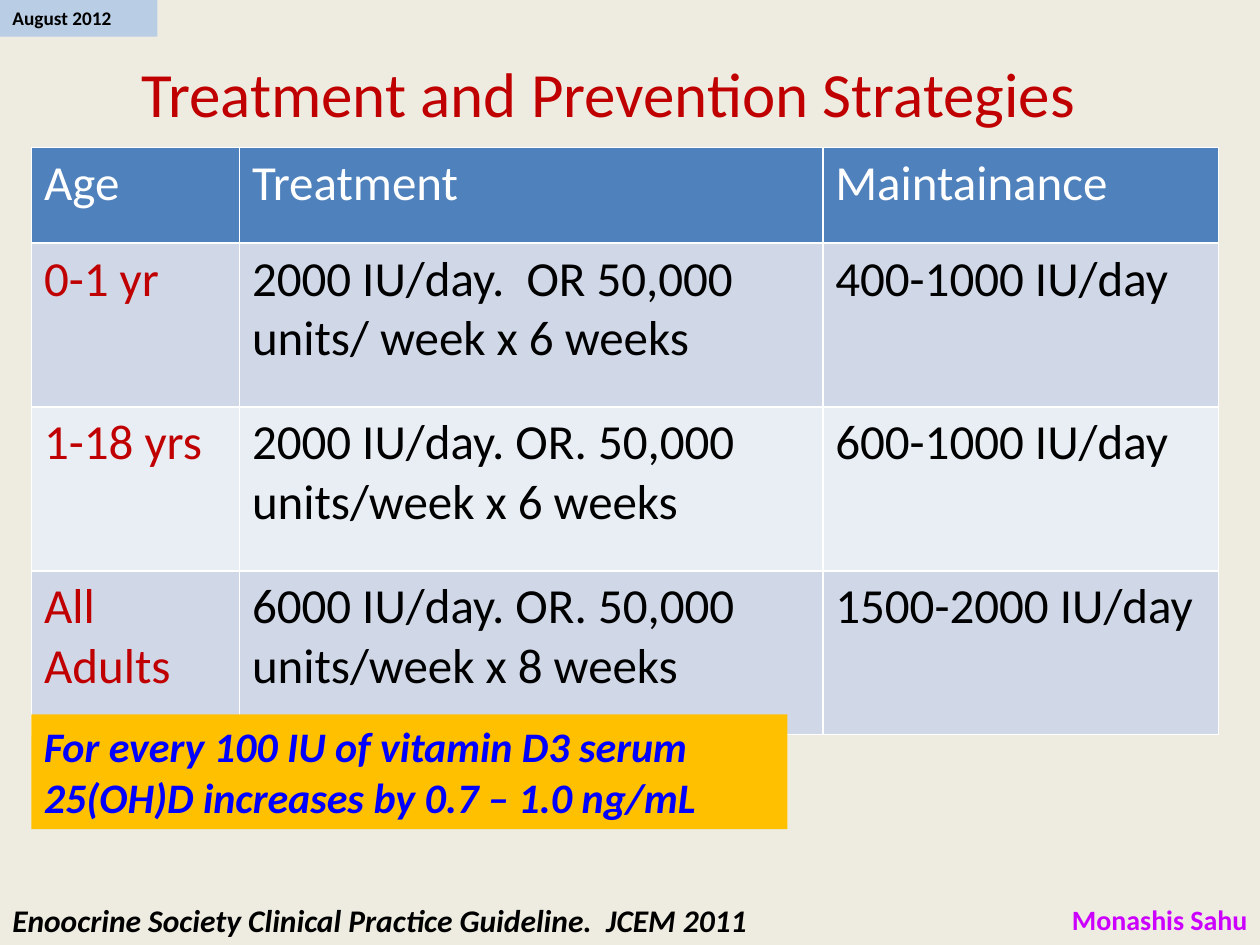
import pptx
import pptx.dml.color
import pptx.enum.shapes
import pptx.enum.text
import pptx.oxml.ns
import pptx.util
from lxml import etree

Inches = pptx.util.Inches
Pt = pptx.util.Pt
ALIGN = pptx.enum.text.PP_ALIGN
ANCHOR = pptx.enum.text.MSO_ANCHOR

COLORS = {
    "background": "EEECE1", "date": "B9CDE5", "note": "FFC000",
    "header": "4F81BD", "odd_row": "D0D8E8", "even_row": "E9EDF4",
    "white": "FFFFFF", "black": "000000", "red": "C00000",
    "blue": "0000FF", "magenta": "CC00FF",
}

DATE = "August 2012"
TITLE = "Treatment and Prevention Strategies"
AUTHOR = "Monashis Sahu"
SOURCE = "Enoocrine Society Clinical Practice Guideline.  JCEM 2011"
NOTE = "For every 100 IU of vitamin D3 serum 25(OH)D increases by 0.7 – 1.0 ng/mL"
DOSES = [
    ("Age", "Treatment", "Maintainance"),
    ("0-1 yr", "2000 IU/day.  OR 50,000 units/ week x 6 weeks", "400-1000 IU/day"),
    ("1-18 yrs", "2000 IU/day. OR. 50,000 units/week x 6 weeks", "600-1000 IU/day"),
    ("All Adults", "6000 IU/day. OR. 50,000 units/week x 8 weeks", "1500-2000 IU/day"),
]
COLUMN_WIDTHS = (1.65, 4.63, 3.14)
ROW_HEIGHTS = (0.76, 1.3, 1.3, 1.3)


def rgb(name):
    return pptx.dml.color.RGBColor.from_string(COLORS[name])


def paint(target, name):
    target.fill.solid()
    target.fill.fore_color.rgb = rgb(name)


def write(frame, text, size, color, bold=False, italic=False, align=ALIGN.LEFT):
    frame.word_wrap = True
    paragraph = frame.paragraphs[0]
    paragraph.text = text
    paragraph.alignment = align
    font = paragraph.font
    font.name, font.size, font.bold, font.italic = "Calibri", Pt(size), bold, italic
    font.color.rgb = rgb(color)


def add_text(slide, box, text, size, color, anchor=ANCHOR.TOP, **style):
    shape = slide.shapes.add_textbox(*map(Inches, box))
    shape.text_frame.vertical_anchor = anchor
    write(shape.text_frame, text, size, color, **style)


def add_panel(slide, box, fill, text, size, color, **style):
    shape = slide.shapes.add_shape(
        pptx.enum.shapes.MSO_SHAPE.RECTANGLE, *map(Inches, box))
    shape.shadow.inherit = False
    paint(shape, fill)
    shape.line.fill.background()
    shape.text_frame.vertical_anchor = ANCHOR.TOP
    write(shape.text_frame, text, size, color, **style)


def add_borders(cell):
    qn = pptx.oxml.ns.qn
    properties = cell._tc.get_or_add_tcPr()
    for side in ("lnL", "lnR", "lnT", "lnB"):
        line = etree.SubElement(properties, qn(f"a:{side}"), w=str(Pt(1)))
        fill = etree.SubElement(line, qn("a:solidFill"))
        etree.SubElement(fill, qn("a:srgbClr"), val=COLORS["white"])


def add_dose_table(slide):
    size = (sum(COLUMN_WIDTHS), sum(ROW_HEIGHTS))
    table = slide.shapes.add_table(
        len(DOSES), len(COLUMN_WIDTHS), *map(Inches, (0.25, 1.17, *size))).table
    for column, width in zip(table.columns, COLUMN_WIDTHS):
        column.width = Inches(width)
    for row_index, (height, texts) in enumerate(zip(ROW_HEIGHTS, DOSES)):
        table.rows[row_index].height = Inches(height)
        row_fill = "odd_row" if row_index % 2 else "even_row"
        for column_index, text in enumerate(texts):
            cell = table.cell(row_index, column_index)
            add_borders(cell)
            if row_index == 0:
                fill, color = "header", "white"
            else:
                fill, color = row_fill, "black" if column_index else "red"
            paint(cell, fill)
            write(cell.text_frame, text, 28, color)


def main():
    presentation = pptx.Presentation()
    presentation.slide_width = Inches(10)
    presentation.slide_height = Inches(7.5)
    slide = presentation.slides.add_slide(presentation.slide_layouts[6])
    paint(slide.background, "background")

    add_panel(slide, (0, 0, 1.25, 0.29), "date", DATE, 11, "black", bold=True)
    add_text(slide, (0.33, 0.38, 9, 0.7), TITLE, 36, "red",
             anchor=ANCHOR.MIDDLE, align=ALIGN.CENTER)
    add_text(slide, (6.83, 7.1, 3.17, 0.4), AUTHOR, 16, "magenta",
             anchor=ANCHOR.MIDDLE, bold=True, align=ALIGN.RIGHT)
    add_dose_table(slide)
    add_text(slide, (0, 7.1, 7, 0.4), SOURCE, 18, "black", bold=True, italic=True)
    add_panel(slide, (0.25, 5.67, 6, 0.91), "note", NOTE, 24, "blue",
              bold=True, italic=True)
    presentation.save("out.pptx")


if __name__ == "__main__":
    main()
